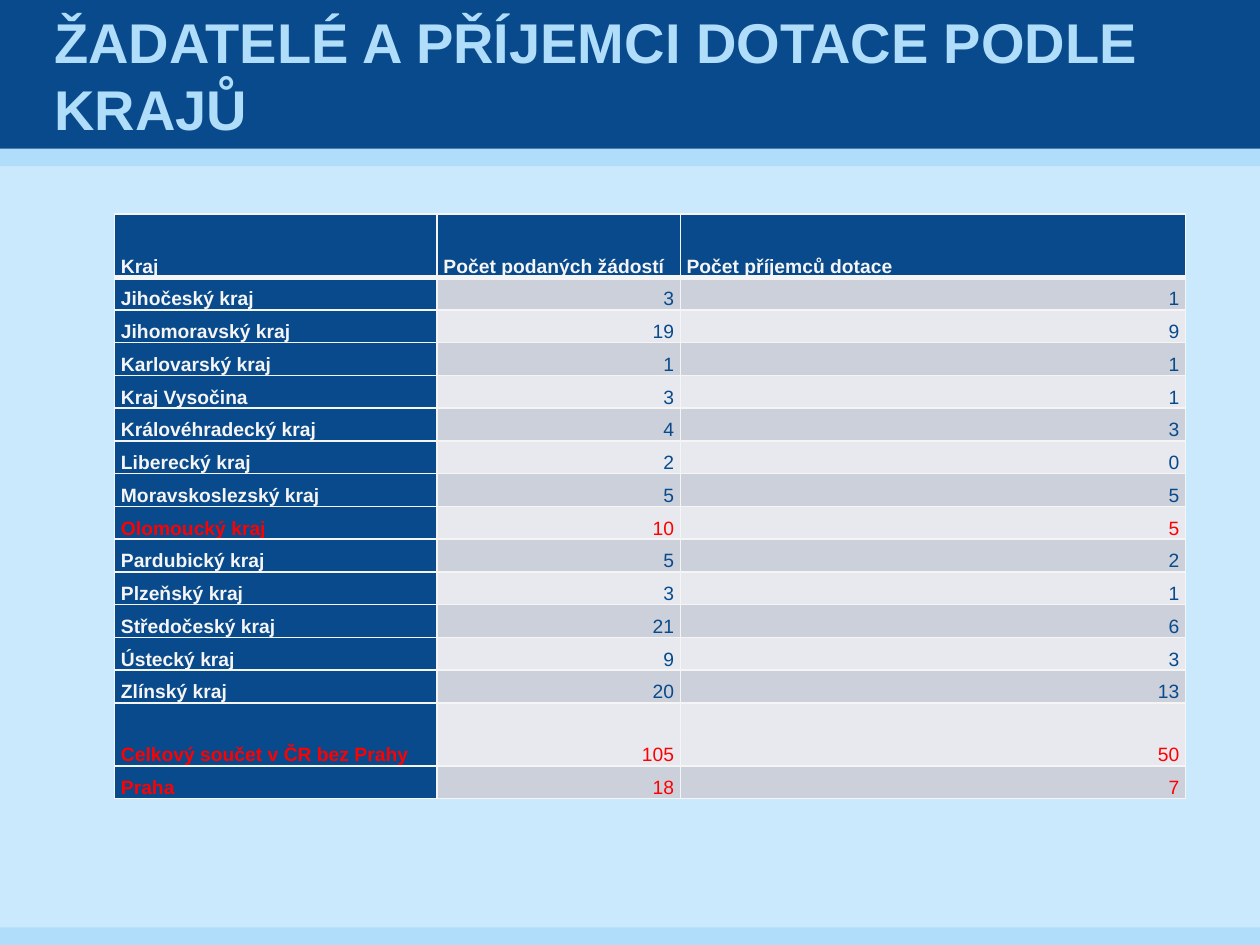
from lxml.etree import SubElement
from pptx import Presentation
from pptx.dml.color import RGBColor
from pptx.enum.shapes import MSO_SHAPE
from pptx.enum.text import MSO_ANCHOR, PP_ALIGN
from pptx.oxml.ns import qn
from pptx.util import Inches, Pt

COLORS = {
    "background": "CAE9FC",
    "sky": "AFDDFA",
    "navy": "084A8B",
    "light": "F5F5F5",
    "red": "FF0000",
    "odd": "CCD0DA",
    "even": "E7E9EE",
}

HEADER = ("Kraj", "Počet podaných žádostí", "Počet příjemců dotace")
REGIONS = [
    ("Jihočeský kraj", 3, 1),
    ("Jihomoravský kraj", 19, 9),
    ("Karlovarský kraj", 1, 1),
    ("Kraj Vysočina", 3, 1),
    ("Královéhradecký kraj", 4, 3),
    ("Liberecký kraj", 2, 0),
    ("Moravskoslezský kraj", 5, 5),
    ("Olomoucký kraj", 10, 5),
    ("Pardubický kraj", 5, 2),
    ("Plzeňský kraj", 3, 1),
    ("Středočeský kraj", 21, 6),
    ("Ústecký kraj", 9, 3),
    ("Zlínský kraj", 20, 13),
    ("Celkový součet v ČR bez Prahy", 105, 50),
    ("Praha", 18, 7),
]
TOTAL = "Celkový součet v ČR bez Prahy"
HIGHLIGHTED = {"Olomoucký kraj", TOTAL, "Praha"}


def rgb(name):
    return RGBColor.from_string(COLORS[name])


class SlideBuilder:
    font = "Arial"

    def __init__(self, slide):
        self.slide = slide
        fill = slide.background.fill
        fill.solid()
        fill.fore_color.rgb = rgb("background")

    def band(self, top, height, color):
        """Full-width colour band."""
        sp = self.slide.shapes.add_shape(
            MSO_SHAPE.RECTANGLE, 0, Inches(top), Inches(10), Inches(height))
        sp.shadow.inherit = False
        sp.fill.solid()
        sp.fill.fore_color.rgb = rgb(color)
        sp.line.fill.background()

    def run(self, p, text, size, color, bold):
        r = p.add_run()
        r.text = text
        r.font.name = self.font
        r.font.size = Pt(size)
        r.font.bold = bold
        r.font.color.rgb = rgb(color)

    def title(self, text, left, top, width, height):
        sp = self.slide.shapes.add_textbox(
            Inches(left), Inches(top), Inches(width), Inches(height))
        tf = sp.text_frame
        tf.word_wrap = True
        tf.vertical_anchor = MSO_ANCHOR.MIDDLE
        tf.margin_left = tf.margin_right = Inches(0.04)
        tf.margin_top = tf.margin_bottom = 0
        self.run(tf.paragraphs[0], text, 32, "sky", True)

    def borders(self, cell, widths):
        """Widths in points by side: L, R, T, B."""
        tc_pr = cell._tc.get_or_add_tcPr()
        for side, width in widths.items():
            ln = SubElement(tc_pr, qn(f"a:ln{side}"), w=str(Pt(width)))
            fill = SubElement(ln, qn("a:solidFill"))
            SubElement(fill, qn("a:srgbClr"), val=COLORS["light"])

    def cell(self, cell, text, fill, color, bold, align, widths):
        self.borders(cell, widths)
        cell.fill.solid()
        cell.fill.fore_color.rgb = rgb(fill)
        cell.vertical_anchor = MSO_ANCHOR.BOTTOM
        cell.margin_left = cell.margin_right = Inches(0.05)
        cell.margin_top = cell.margin_bottom = 0
        p = cell.text_frame.paragraphs[0]
        p.alignment = align
        p.line_spacing = 1.15
        self.run(p, text, 11, color, bold)

    def table(self, left, top, col_widths, header, records):
        rows = [header, *records]
        heights = [0.5 if row[0] in (header[0], TOTAL) else 0.26 for row in rows]
        table = self.slide.shapes.add_table(
            len(rows), len(header), Inches(left), Inches(top),
            Inches(sum(col_widths)), Inches(sum(heights))).table
        table.first_col = True
        for column, width in zip(table.columns, col_widths):
            column.width = Inches(width)
        for i, (row, height) in enumerate(zip(rows, heights)):
            table.rows[i].height = Inches(height)
            for j, value in enumerate(row):
                heading = i == 0 or j == 0
                fill = "navy" if heading else "odd" if i % 2 else "even"
                color = "light" if heading else "navy"
                if row[0] in HIGHLIGHTED:
                    color = "red"
                align = PP_ALIGN.LEFT if heading else PP_ALIGN.RIGHT
                # Thick rule between the header and the regions
                widths = {"L": 1, "R": 1,
                          "T": 3 if i == 1 else 1, "B": 3 if i == 0 else 1}
                self.cell(table.cell(i, j), str(value), fill, color,
                          heading, align, widths)


def main():
    prs = Presentation()
    prs.slide_width, prs.slide_height = Inches(10), Inches(7.5)
    s = SlideBuilder(prs.slides.add_slide(prs.slide_layouts[6]))

    # Header and footer bands
    s.band(1.18, 0.14, "sky")
    s.band(0, 1.18, "navy")
    s.band(7.36, 0.14, "sky")

    # Title and table of regions
    s.title("ŽADATELÉ A PŘÍJEMCI DOTACE PODLE KRAJŮ", 0.39, 0, 9.21, 1.18)
    s.table(0.91, 1.7, (2.56, 1.93, 4.01), HEADER, REGIONS)

    prs.save("out.pptx")


if __name__ == "__main__":
    main()
